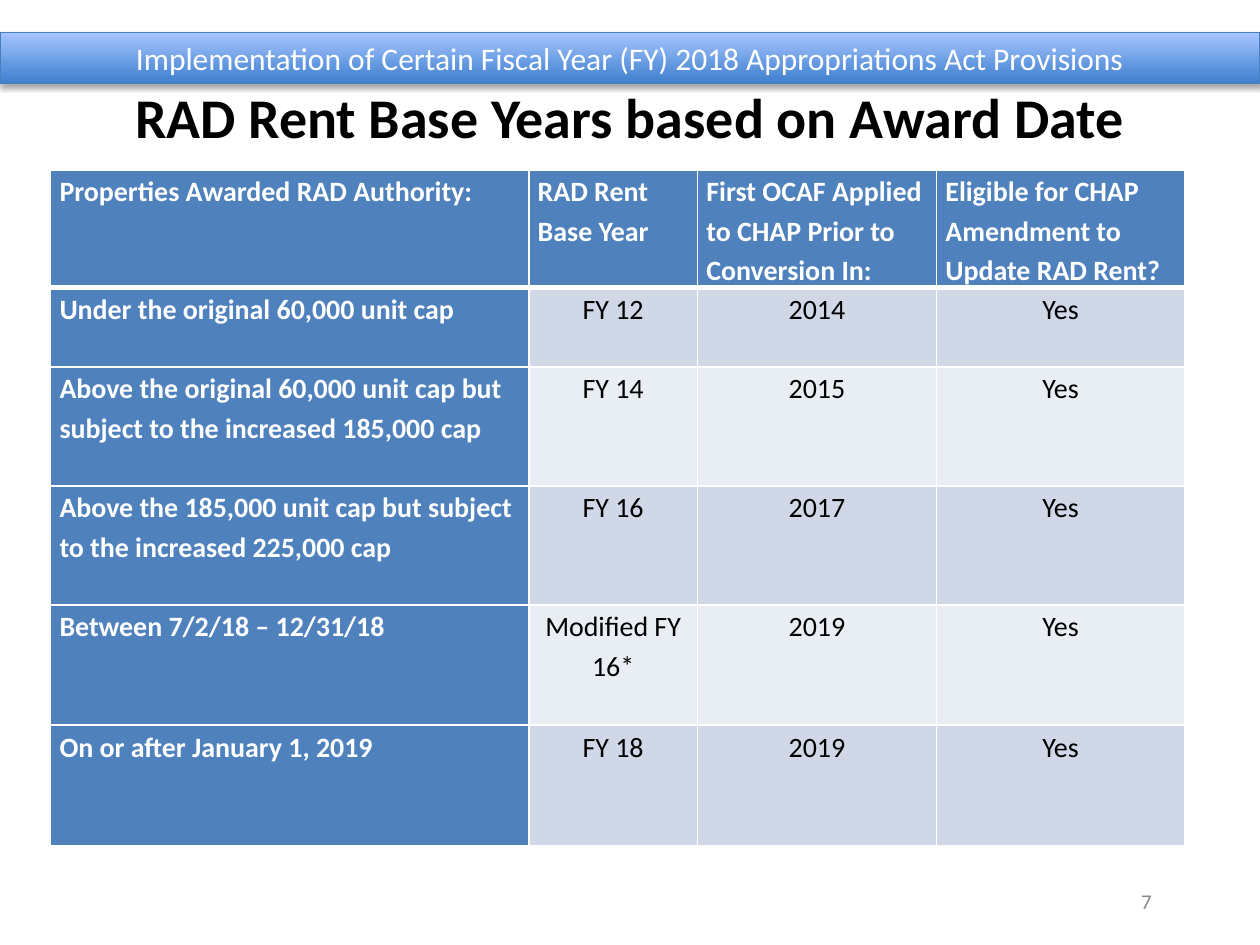
from lxml.etree import SubElement
from pptx import Presentation
from pptx.dml.color import RGBColor
from pptx.enum.shapes import MSO_SHAPE
from pptx.enum.text import MSO_ANCHOR, PP_ALIGN
from pptx.oxml import parse_xml
from pptx.oxml.ns import nsdecls, qn
from pptx.util import Cm, Pt

COLORS = {
    "white": "FFFFFF", "black": "000000", "blue": "4F81BD",
    "band_dark": "D0D8E8", "band_light": "E9EDF4", "gray": "898989",
    "bar_bottom": "3F80CE", "bar_top": "A4C4FF", "bar_line": "4B7EBC",
}
COL_WIDTHS = [9.64, 3.4, 4.82, 5.0]
ROW_HEIGHTS = [2.36, 1.61, 2.4, 2.4, 2.42, 2.42]
ROWS = [
    ["Properties Awarded RAD Authority:", "RAD Rent Base Year",
     "First OCAF Applied to CHAP Prior to Conversion In:",
     "Eligible for CHAP Amendment to Update RAD Rent?"],
    ["Under the original 60,000 unit cap", "FY 12", "2014", "Yes"],
    ["Above the original 60,000 unit cap but subject to the increased 185,000 cap",
     "FY 14", "2015", "Yes"],
    ["Above the 185,000 unit cap but subject to the increased 225,000 cap",
     "FY 16", "2017", "Yes"],
    ["Between 7/2/18 – 12/31/18", "Modified FY 16*", "2019", "Yes"],
    ["On or after January 1, 2019", "FY 18", "2019", "Yes"],
]
PLAIN = {"size": Pt(16), "bold": False, "name": "Calibri"}
STRONG = {**PLAIN, "bold": True}
CELL_PARAGRAPH = {"line_spacing": 1.15, "space_after": Pt(0.6)}
CELL_MARGINS = {"margin_left": Cm(0.18), "margin_right": Cm(0.18),
                "margin_top": 0, "margin_bottom": 0}


def rgb(name):
    return RGBColor.from_string(COLORS[name])


def set_attrs(obj, values):
    for name, value in values.items():
        setattr(obj, name, value)


def write(tf, text, font, color, paragraph):
    tf.word_wrap = True
    p = tf.paragraphs[0]
    set_attrs(p, paragraph)
    r = p.add_run()
    r.text = text
    set_attrs(r.font, font)
    r.font.color.rgb = rgb(color)


def add_label(s, box, text, font, color, align):
    tf = s.shapes.add_textbox(*map(Cm, box)).text_frame
    write(tf, text, font, color, {"alignment": align})
    tf.vertical_anchor = MSO_ANCHOR.MIDDLE


def add_banner(s, box, text):
    sp = s.shapes.add_shape(MSO_SHAPE.RECTANGLE, *map(Cm, box))
    sp.fill.gradient()
    sp.fill.gradient_angle = 90
    for stop, name in zip(sp.fill.gradient_stops, ("bar_bottom", "bar_top")):
        stop.color.rgb = rgb(name)
    sp.line.color.rgb = rgb("bar_line")
    sp.line.width = Pt(0.75)
    sp.shadow.inherit = False
    effects = sp.element.spPr.find(qn("a:effectLst"))
    shadow = SubElement(effects, qn("a:outerShdw"), blurRad=str(Pt(3.1)),
                        dist=str(Pt(1.8)), dir="5400000", rotWithShape="0")
    color = SubElement(shadow, qn("a:srgbClr"), val=COLORS["black"])
    SubElement(color, qn("a:alpha"), val="35000")
    write(sp.text_frame, text, {**PLAIN, "size": Pt(18)}, "white",
          {"alignment": PP_ALIGN.CENTER})
    sp.text_frame.vertical_anchor = MSO_ANCHOR.MIDDLE


def set_borders(cell, row):
    widths = {"L": 1, "R": 1, "T": 3 if row == 1 else 1, "B": 3 if row == 0 else 1}
    tcPr = cell._tc.get_or_add_tcPr()
    for i, (side, width) in enumerate(widths.items()):
        tcPr.insert(i, parse_xml(
            f'<a:ln{side} {nsdecls("a")} w="{Pt(width)}"><a:solidFill>'
            f'<a:srgbClr val="{COLORS["white"]}"/></a:solidFill></a:ln{side}>'))


def add_rent_table(s, box):
    table = s.shapes.add_table(len(ROWS), len(COL_WIDTHS), *map(Cm, box)).table
    for column, width in zip(table.columns, COL_WIDTHS):
        column.width = Cm(width)
    for i, (row, height) in enumerate(zip(table.rows, ROW_HEIGHTS)):
        row.height = Cm(height)
        band = "band_dark" if i % 2 else "band_light"
        for j, cell in enumerate(row.cells):
            heading = i == 0 or j == 0
            set_attrs(cell, CELL_MARGINS)
            cell.fill.solid()
            cell.fill.fore_color.rgb = rgb("blue" if heading else band)
            align = PP_ALIGN.LEFT if heading else PP_ALIGN.CENTER
            write(cell.text_frame, ROWS[i][j], STRONG if heading else PLAIN,
                  "white" if heading else "black",
                  {**CELL_PARAGRAPH, "alignment": align})
            set_borders(cell, i)


def main():
    prs = Presentation()
    prs.slide_width, prs.slide_height = Cm(25.4), Cm(19.05)
    s = prs.slides.add_slide(prs.slide_layouts[6])
    add_label(s, (1.27, 0.76, 22.86, 3.18), "RAD Rent Base Years based on Award Date",
              {**STRONG, "size": Pt(32)}, "black", PP_ALIGN.CENTER)
    add_rent_table(s, (1.02, 3.43, sum(COL_WIDTHS), sum(ROW_HEIGHTS)))
    add_label(s, (18.21, 17.65, 5.26, 1.02), "7", {**PLAIN, "size": Pt(12)},
              "gray", PP_ALIGN.RIGHT)
    add_banner(s, (0, 0.66, 25.4, 1.02),
               "Implementation of Certain Fiscal Year (FY) 2018 Appropriations Act Provisions")
    prs.save("out.pptx")


if __name__ == "__main__":
    main()
